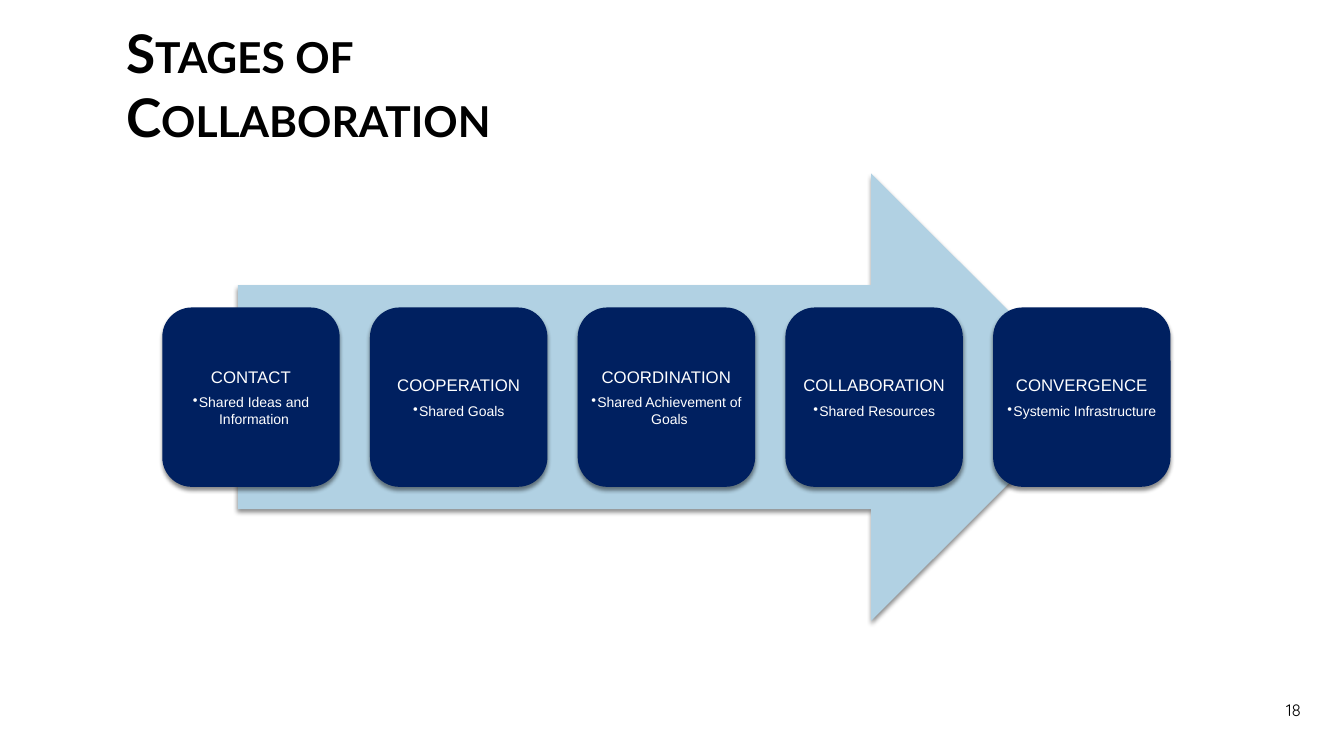
"""Build the stages of collaboration slide."""
from lxml import etree
from pptx import Presentation
from pptx.dml.color import RGBColor
from pptx.enum import shapes, text
from pptx.oxml import ns
from pptx.util import Inches, Pt

TITLE = "Stages of Collaboration"
PAGE_NUMBER = "18"
STAGES = [
    ("CONTACT", "Shared Ideas and Information"),
    ("COOPERATION", "Shared Goals"),
    ("COORDINATION", "Shared Achievement of Goals"),
    ("COLLABORATION", "Shared Resources"),
    ("CONVERGENCE", "Systemic Infrastructure"),
]
NAVY, PALE_BLUE, WHITE, BLACK = "002060", "B1D1E3", "FFFFFF", "000000"
STAGE_LEFT, STAGE_TOP, STAGE_WIDTH, STAGE_HEIGHT = 1.61, 3.05, 1.76, 1.78
STAGE_PITCH = 2.06


def color(value):
    return RGBColor.from_string(value)


def add_run(paragraph, words, font_name, size, fill):
    run = paragraph.add_run()
    run.text = words
    run.font.name = font_name
    run.font.size = Pt(size)
    run.font.color.rgb = color(fill)
    return run


def add_shadowed_shape(slide, kind, box, fill):
    shape = slide.shapes.add_shape(kind, *map(Inches, box))
    shape.fill.solid()
    shape.fill.fore_color.rgb = color(fill)
    shape.line.fill.background()
    shape.shadow.inherit = False
    effects = shape.element.spPr.find(ns.qn("a:effectLst"))
    shadow = etree.SubElement(
        effects, ns.qn("a:outerShdw"), blurRad=str(Pt(3)), dist=str(Pt(2.4)),
        dir="5400000", rotWithShape="0")
    shade = etree.SubElement(shadow, ns.qn("a:srgbClr"), val=BLACK)
    etree.SubElement(shade, ns.qn("a:alpha"), val="45000")
    return shape


def add_bullet(paragraph):
    properties = paragraph._p.get_or_add_pPr()
    properties.set("marL", str(Inches(0.06)))
    properties.set("indent", str(Inches(-0.06)))
    etree.SubElement(properties, ns.qn("a:buChar"), char="•")


def add_stage(slide, index, name, detail):
    left = STAGE_LEFT + index * STAGE_PITCH
    shape = add_shadowed_shape(
        slide, shapes.MSO_SHAPE.ROUNDED_RECTANGLE,
        (left, STAGE_TOP, STAGE_WIDTH, STAGE_HEIGHT), NAVY)
    frame = shape.text_frame
    frame.word_wrap = True
    frame.vertical_anchor = text.MSO_ANCHOR.MIDDLE
    frame.margin_left = frame.margin_right = Inches(0.04)
    frame.margin_top = frame.margin_bottom = Inches(0.05)
    heading, bullet = frame.paragraphs[0], frame.add_paragraph()
    heading.space_after = Pt(5)
    bullet.level = 1
    bullet.space_after = Pt(1.5)
    add_bullet(bullet)
    for paragraph, words, size in ((heading, name, 12), (bullet, detail, 10)):
        paragraph.alignment = text.PP_ALIGN.CENTER
        add_run(paragraph, words, "Arial", size, WHITE)


def add_title(slide):
    title = slide.shapes.title
    title.left, title.top = Inches(1.15), Inches(0.15)
    title.width, title.height = Inches(5.86), Inches(1.38)
    frame = title.text_frame
    frame.word_wrap = True
    frame.auto_size = text.MSO_AUTO_SIZE.NONE
    frame.vertical_anchor = text.MSO_ANCHOR.TOP
    paragraph = frame.paragraphs[0]
    paragraph.alignment = text.PP_ALIGN.LEFT
    run = add_run(paragraph, TITLE, "Lato", 38, BLACK)
    run.font.bold = True
    run.font._element.set("cap", "small")


def add_page_number(slide):
    box = slide.shapes.add_textbox(*map(Inches, (12.44, 6.91, 0.78, 0.27)))
    frame = box.text_frame
    frame.word_wrap = True
    frame.vertical_anchor = text.MSO_ANCHOR.MIDDLE
    paragraph = frame.paragraphs[0]
    paragraph.alignment = text.PP_ALIGN.CENTER
    add_run(paragraph, PAGE_NUMBER, "Quicksand", 11.9, BLACK)


def main():
    presentation = Presentation()
    presentation.slide_width, presentation.slide_height = Inches(13.33), Inches(7.5)
    slide = presentation.slides.add_slide(presentation.slide_layouts[5])
    add_title(slide)
    add_page_number(slide)
    add_shadowed_shape(
        slide, shapes.MSO_SHAPE.RIGHT_ARROW, (2.36, 1.72, 8.5, 4.44), PALE_BLUE)
    for index, (name, detail) in enumerate(STAGES):
        add_stage(slide, index, name, detail)
    presentation.save("out.pptx")


if __name__ == "__main__":
    main()
